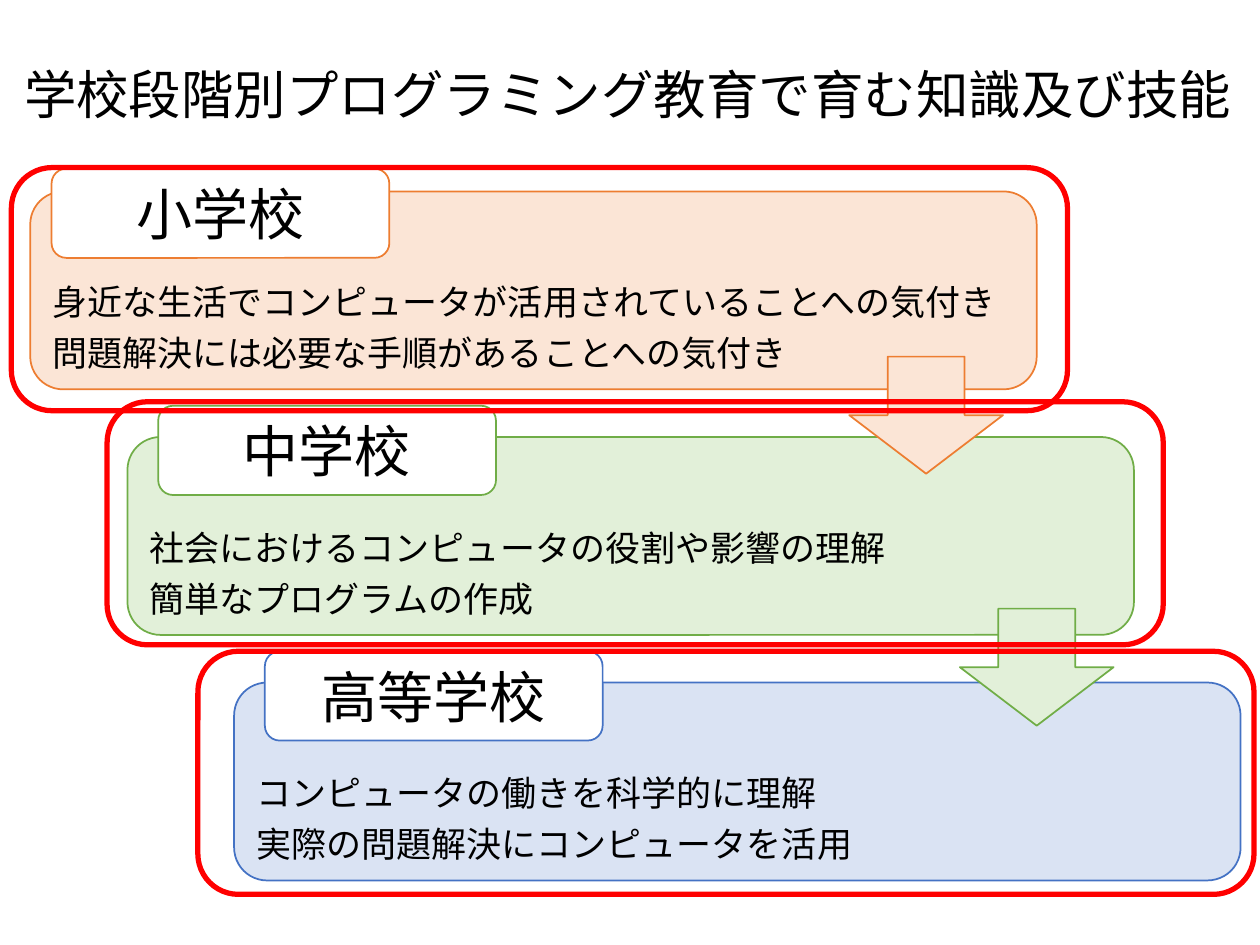
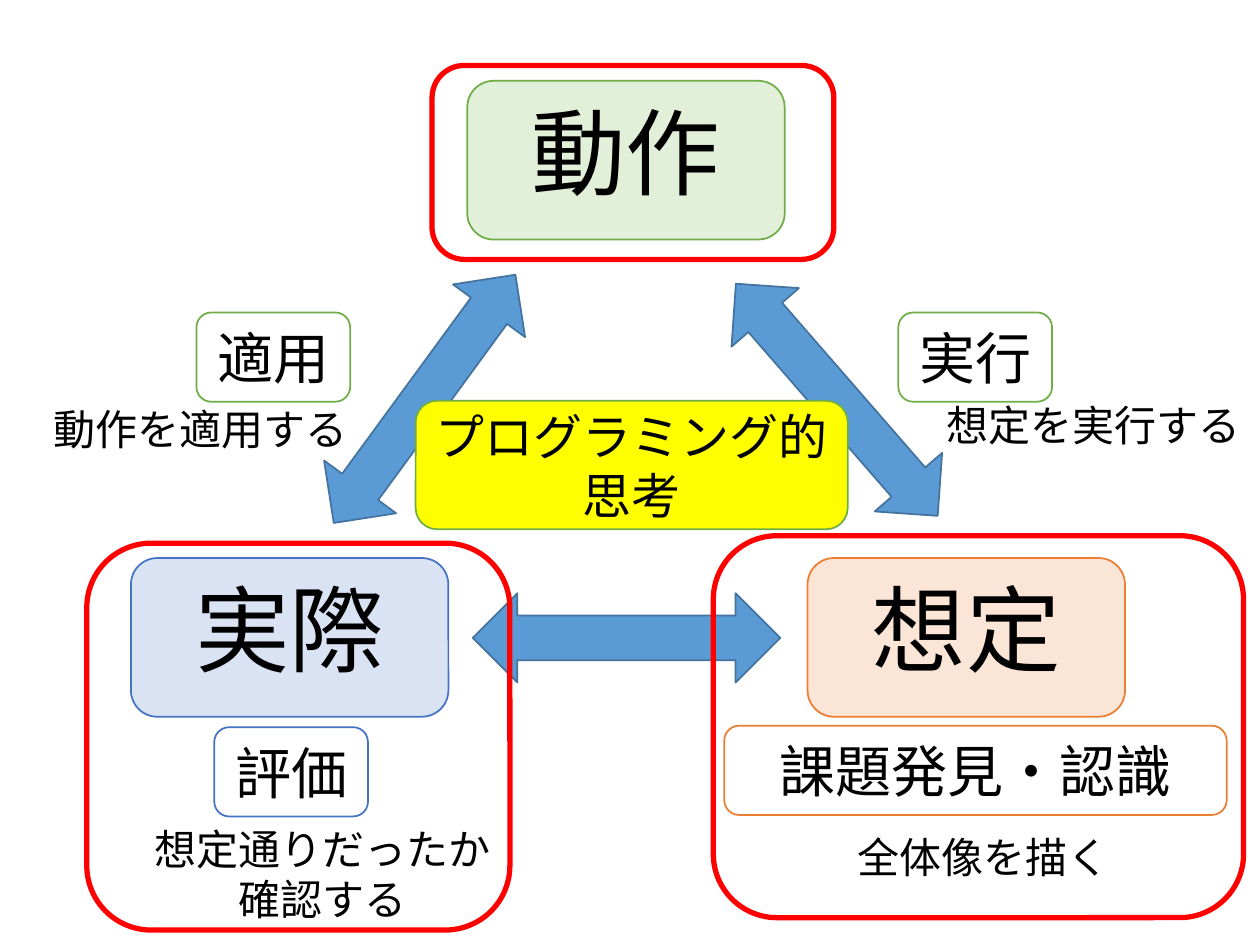
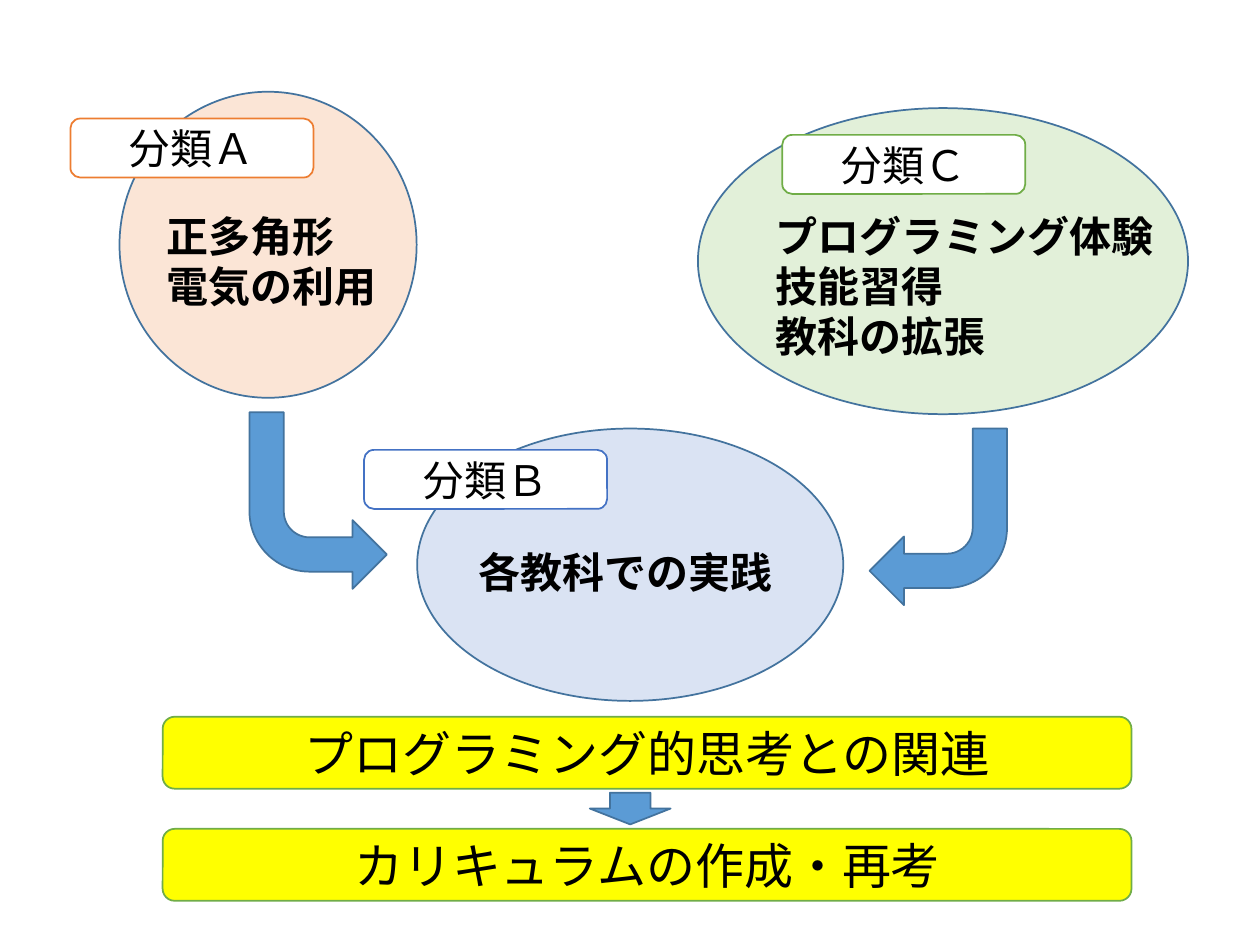
from lxml import etree
from pptx import Presentation
from pptx.dml.color import RGBColor
from pptx.enum.shapes import MSO_SHAPE
from pptx.enum.text import MSO_ANCHOR, MSO_AUTO_SIZE, PP_ALIGN
from pptx.oxml.ns import qn
from pptx.util import Cm, Pt

ROUND, OVAL = MSO_SHAPE.ROUNDED_RECTANGLE, MSO_SHAPE.OVAL
DOWN, BENT = MSO_SHAPE.DOWN_ARROW, MSO_SHAPE.BENT_ARROW
DOUBLE = MSO_SHAPE.LEFT_RIGHT_ARROW
TOP, MIDDLE, BOTTOM = MSO_ANCHOR.TOP, MSO_ANCHOR.MIDDLE, MSO_ANCHOR.BOTTOM
LEFT, CENTER = PP_ALIGN.LEFT, PP_ALIGN.CENTER
NO_FIT, FIT_SHAPE = MSO_AUTO_SIZE.NONE, MSO_AUTO_SIZE.SHAPE_TO_FIT_TEXT
TITLE_ONLY, BLANK = 5, 6

FONT = "Noto Sans CJK JP"
WHITE, BLACK, YELLOW, RED = "FFFFFF", "000000", "FFFF00", "FF0000"
# Pairs of fill and line
ORANGE = ("FBE5D6", "ED7D31")
GREEN = ("E2F0D9", "70AD47")
BLUE = ("DAE3F3", "4472C4")
ARROW = ("5B9BD5", "43739E")
HIGHLIGHT = (YELLOW, GREEN[1])


def rgb(value):
    return RGBColor.from_string(value)


class Deck:
    def __init__(self):
        self.prs = Presentation()
        self.prs.slide_width, self.prs.slide_height = Cm(25.4), Cm(19.05)
        self.slide = None

    def new_slide(self, layout=BLANK):
        self.slide = self.prs.slides.add_slide(self.prs.slide_layouts[layout])

    def set_text(self, sp, text, size, align=CENTER, anchor=MIDDLE, spacing=None, bold=False,
                 **frame):
        tf = sp.text_frame
        for name, value in dict(word_wrap=True, vertical_anchor=anchor, **frame).items():
            setattr(tf, name, value)
        for i, line in enumerate(text.split("\n")):
            p = tf.add_paragraph() if i else tf.paragraphs[0]
            p.alignment, p.line_spacing = align, spacing
            r = p.add_run()
            r.text = line
            for name, value in dict(name=FONT, size=Pt(size), bold=bold).items():
                setattr(r.font, name, value)
            r.font.color.rgb = rgb(BLACK)
            etree.SubElement(r.font._element, qn("a:ea"), typeface=FONT)

    def title(self, text, *box):
        sp = self.slide.shapes.title
        sp.left, sp.top, sp.width, sp.height = map(Cm, box)
        self.set_text(sp, text, 30, LEFT, TOP, 0.9, auto_size=NO_FIT)

    def shape(self, kind, box, fill=None, line=None, width=1, rotation=0):
        sp = self.slide.shapes.add_shape(kind, *map(Cm, box))
        sp.shadow.inherit = False
        sp.rotation = rotation
        if fill:
            sp.fill.solid()
            sp.fill.fore_color.rgb = rgb(fill)
        else:
            sp.fill.background()
        if line:
            sp.line.color.rgb = rgb(line)
            sp.line.width = Pt(width)
        else:
            sp.line.fill.background()
        return sp

    def card(self, text, colours, *box, size=28, **fmt):
        self.set_text(self.shape(ROUND, box, *colours), text, size, **fmt)

    def label(self, text, line, *box, size=32):
        self.card(text, (WHITE, line), *box, size=size)

    def note(self, text, *box):
        self.card(text, (None, None), *box, size=24)

    def frame(self, *box):
        self.shape(ROUND, box, line=RED, width=3)

    def arrow(self, kind, *box, colours=ARROW, rotation=0, flip=False):
        sp = self.shape(kind, box, *colours, rotation=rotation)
        if flip:
            sp._element.spPr.xfrm.set("flipH", "1")

    def text(self, text, *box):
        sp = self.slide.shapes.add_textbox(*map(Cm, box))
        self.set_text(sp, text, 24, LEFT, TOP, bold=True, auto_size=FIT_SHAPE)


def school_stages(deck):
    deck.new_slide(TITLE_ONLY)
    deck.title("学校段階別プログラミング教育で育む知識及び技能", 0.23, 1.27, 25.1, 1.73)

    # Skills per stage
    skills = [
        (0.61, ORANGE, "身近な生活でコンピュータが活用されていることへの気付き\n"
                       "問題解決には必要な手順があることへの気付き"),
        (2.57, GREEN, "社会におけるコンピュータの役割や影響の理解\n簡単なプログラムの作成"),
        (4.72, BLUE, "コンピュータの働きを科学的に理解\n実際の問題解決にコンピュータを活用"),
    ]
    for i, (left, colours, text) in enumerate(skills):
        deck.card(text, colours, left, 3.86 + 4.95 * i, 20.29, 3.99,
                  size=20, align=LEFT, anchor=BOTTOM, spacing=Pt(29))

    # Stage names
    stages = [("小学校", ORANGE, 3.4), ("中学校", GREEN, 8.18), ("高等学校", BLUE, 13.13)]
    for i, (name, colours, top) in enumerate(stages):
        deck.label(name, colours[1], 1.04 + 2.15 * i, top, 6.81, 1.8)

    # Steps to the next stage, and frames
    for left, top, colours in [(17.12, 7.19, ORANGE), (19.35, 12.27, GREEN)]:
        deck.arrow(DOWN, left, top, 3.1, 2.36, colours=colours)
    for left, top in [(0.23, 3.38), (2.16, 8.1), (3.99, 13.13)]:
        deck.frame(left, top, 21.29, 4.9)


def thinking_cycle(deck):
    deck.new_slide()

    # Three corners
    for text, colours, left, top in [("想定", ORANGE, 16.28, 11.25), ("動作", GREEN, 9.42, 1.63),
                                     ("実際", BLUE, 2.64, 11.25)]:
        deck.card(text, colours, left, top, 6.4, 3.2, size=54, spacing=Pt(29), margin_top=Cm(1))

    # Activities
    for text, colours, left, top, width in [
            ("課題発見・認識", ORANGE, 14.6, 14.63, 10.13), ("適用", GREEN, 3.96, 6.3, 3.1),
            ("評価", BLUE, 4.32, 14.66, 3.1), ("実行", GREEN, 18.11, 6.3, 3.1)]:
        deck.label(text, colours[1], left, top, width, 1.8)

    # Arrows between corners
    for left, top, angle in [(13.77, 7.16, 49), (5.46, 7.14, 306.2), (9.53, 11.96, 0)]:
        deck.arrow(DOUBLE, left, top, 6.2, 1.8, rotation=angle)

    # Explanations
    for text, left, top, width in [
            ("想定通りだったか\n確認する", 1.27, 16.71, 10.46), ("全体像を描く", 14.6, 16.38, 10.46),
            ("想定を実行する", 18.69, 7.67, 6.71), ("動作を適用する", 0.69, 7.75, 6.71)]:
        deck.note(text, left, top, width, 1.8)

    # Centre and frames
    deck.card("プログラミング的\n思考", HIGHLIGHT, 8.38, 8.08, 8.71, 2.59)
    for box in [(14.38, 10.8, 10.69, 7.7), (8.71, 1.32, 8.1, 3.91), (1.75, 10.95, 8.53, 7.8)]:
        deck.frame(*box)


def categories(deck):
    deck.new_slide()

    # Category ovals, each with a label and a text
    for name, colours, oval, label, text, text_box in [
            ("分類Ａ", ORANGE, (2.41, 1.85, 5.99, 6.17), (1.42, 2.39),
             "正多角形\n電気の利用", (3.1, 4.11, 5.82, 2.31)),
            ("分類Ｃ", GREEN, (14.07, 2.18, 9.88, 6.17), (15.77, 2.72),
             "プログラミング体験\n技能習得\n教科の拡張", (15.39, 4.11, 8.79, 3.33)),
            ("分類Ｂ", BLUE, (8.41, 8.64, 8.59, 5.49), (7.34, 9.07),
             "各教科での実践", (9.4, 10.9, 6.86, 1.27))]:
        deck.shape(OVAL, oval, colours[0], ARROW[1])
        deck.label(name, colours[1], *label, 4.9, 1.19, size=24)
        deck.text(text, *text_box)

    # Arrows into category B
    for left, top, flip in [(17.53, 8.64, False), (5.03, 8.31, True)]:
        deck.arrow(BENT, left, top, 2.77, 3.56, rotation=180, flip=flip)

    # Conclusion
    for text, top in [("プログラミング的思考との関連", 14.45), ("カリキュラムの作成・再考", 16.71)]:
        deck.card(text, HIGHLIGHT, 3.28, top, 19.53, 1.45)
    deck.arrow(DOWN, 11.89, 15.98, 1.63, 0.64)


def main():
    deck = Deck()
    for build in (school_stages, thinking_cycle, categories):
        build(deck)
    deck.prs.save("out.pptx")


if __name__ == "__main__":
    main()
